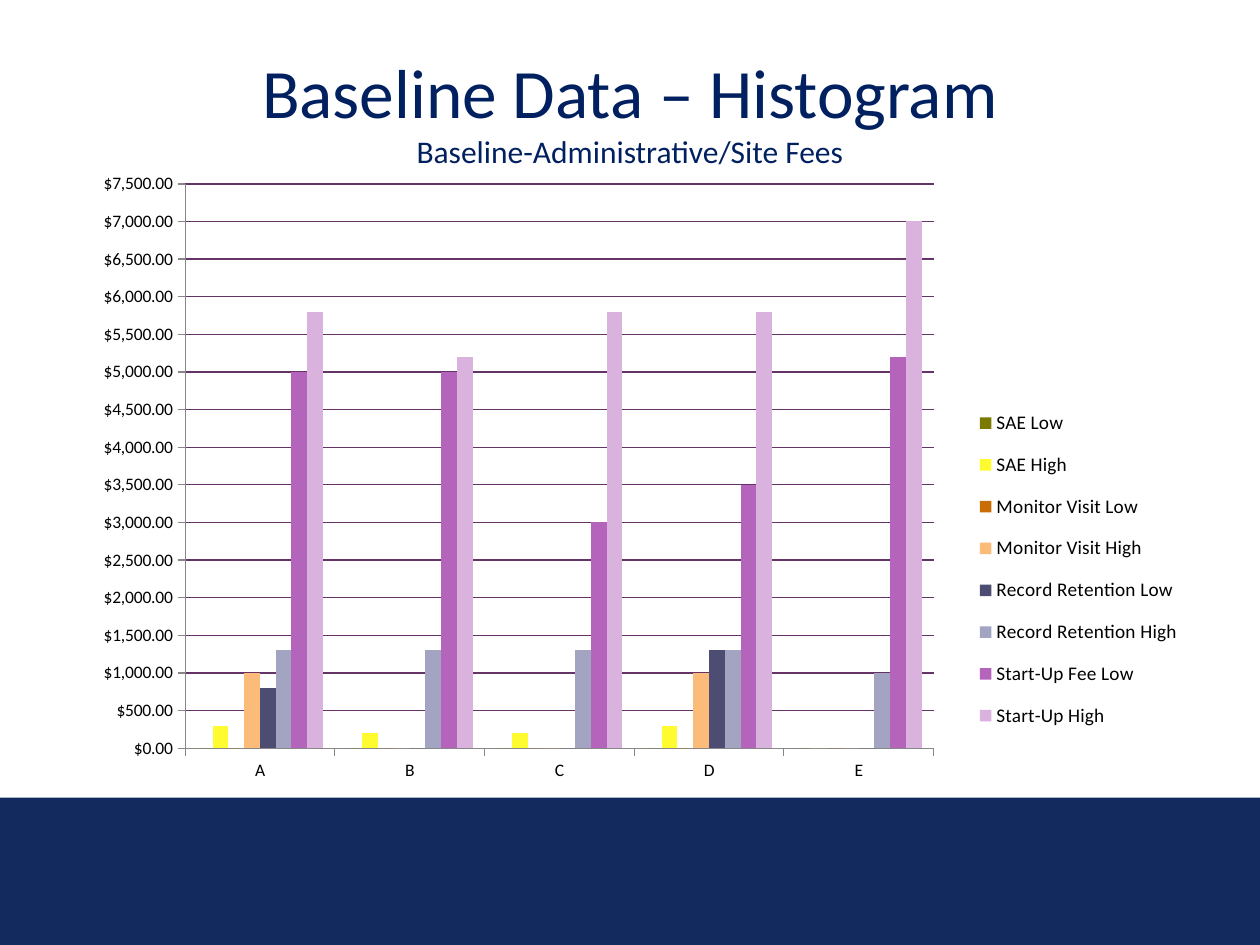
import pptx
import pptx.chart.data
import pptx.dml.color
import pptx.enum.chart
import pptx.enum.shapes
import pptx.enum.text
import pptx.oxml
import pptx.oxml.ns
import pptx.util

RGB = pptx.dml.color.RGBColor
WHITE = RGB(0xFF, 0xFF, 0xFF)
BLACK = RGB(0, 0, 0)
NAVY = RGB(0x12, 0x2A, 0x5D)
TITLE_BLUE = RGB(0x00, 0x20, 0x60)
GRID_PURPLE = RGB(0x66, 0x33, 0x66)
AXIS_GRAY = RGB(0x87, 0x87, 0x87)
OLIVE = RGB(0x7A, 0x79, 0x01)
YELLOW = RGB(0xFE, 0xFB, 0x31)
ORANGE = RGB(0xC9, 0x6D, 0x07)
PEACH = RGB(0xFA, 0xBC, 0x78)
SLATE = RGB(0x4D, 0x4D, 0x73)
LAVENDER = RGB(0xA3, 0xA3, 0xC2)
PURPLE = RGB(0xB4, 0x65, 0xBB)
LILAC = RGB(0xD9, 0xB2, 0xDD)

SITES = ["A", "B", "C", "D", "E"]
FEES = [
    ("SAE Low", OLIVE, [0, 0, 0, 0, 0]),
    ("SAE High", YELLOW, [300, 200, 200, 300, 0]),
    ("Monitor Visit Low", ORANGE, [0, 0, 0, 0, 0]),
    ("Monitor Visit High", PEACH, [1000, 0, 0, 1000, 0]),
    ("Record Retention Low", SLATE, [800, 0, 0, 1300, 0]),
    ("Record Retention High", LAVENDER, [1300, 1300, 1300, 1300, 1000]),
    ("Start-Up Fee Low", PURPLE, [5000, 5000, 3000, 3500, 5200]),
    ("Start-Up High", LILAC, [5800, 5200, 5800, 5800, 7000]),
]


class Deck:
    """Hold the style and the current slide; lengths are in inches on a 10 by 7.5 grid."""

    font = "Calibri"

    def __init__(self):
        self.prs = pptx.Presentation()
        self.prs.slide_width = pptx.util.Inches(10)
        self.prs.slide_height = pptx.util.Inches(7.5)
        self.s = self.prs.slides.add_slide(self.prs.slide_layouts[6])
        self.s.background.fill.solid()
        self.s.background.fill.fore_color.rgb = WHITE

    def box(self, *lengths):
        return [pptx.util.Inches(v) for v in lengths]

    def band(self, at, color):
        sp = self.s.shapes.add_shape(pptx.enum.shapes.MSO_SHAPE.RECTANGLE, *self.box(*at))
        sp.shadow.inherit = False
        sp.fill.solid()
        sp.fill.fore_color.rgb = color
        sp.line.fill.background()

    def title(self, at, lines, color):
        tf = self.s.shapes.add_textbox(*self.box(*at)).text_frame
        tf.word_wrap = True
        tf.vertical_anchor = pptx.enum.text.MSO_ANCHOR.MIDDLE
        p = tf.paragraphs[0]
        p.alignment = pptx.enum.text.PP_ALIGN.CENTER
        p.font.name = self.font
        p.font.color.rgb = color
        for i, (text, size) in enumerate(lines):
            if i:
                p.add_line_break()
            r = p.add_run()
            r.text = text
            r.font.size = pptx.util.Pt(size)

    def layout(self, parent, index, frame, part, inner=False):
        for old in parent.findall(pptx.oxml.ns.qn("c:layout")):
            parent.remove(old)
        target = '<c:layoutTarget val="inner"/>' if inner else ""
        modes = "".join(f'<c:{k}Mode val="edge"/>' for k in "xy")
        sides = "".join(f'<c:{k} val="{length / whole}"/>'
                        for k, length, whole in zip("xywh", part, frame[2:] * 2))
        parent.insert(index, pptx.oxml.parse_xml(
            f'<c:layout {pptx.oxml.ns.nsdecls("c")}><c:manualLayout>'
            f"{target}{modes}{sides}</c:manualLayout></c:layout>"))

    def column_chart(self, at, categories, series, plot, legend):
        data = pptx.chart.data.CategoryChartData()
        data.categories = categories
        for name, _, values in series:
            data.add_series(name, values)
        kind = pptx.enum.chart.XL_CHART_TYPE.COLUMN_CLUSTERED
        chart = self.s.shapes.add_chart(kind, *self.box(*at), data).chart
        chart.has_title = False
        chart.font.name = self.font
        chart.font.size = pptx.util.Pt(10)
        chart.font.color.rgb = BLACK
        bars = chart.plots[0]
        bars.gap_width = 150
        bars.overlap = 0
        bars.vary_by_categories = False
        for ser, (_, color, _) in zip(bars.series, series):
            ser.format.fill.solid()
            ser.format.fill.fore_color.rgb = color
            ser.invert_if_negative = False
        for axis in (chart.category_axis, chart.value_axis):
            axis.major_tick_mark = pptx.enum.chart.XL_TICK_MARK.OUTSIDE
            axis.format.line.color.rgb = AXIS_GRAY
        axis = chart.value_axis
        axis.minimum_scale, axis.maximum_scale, axis.major_unit = 0, 7500, 500
        axis.tick_labels.number_format = '"$"#,##0.00'
        axis.tick_labels.number_format_is_linked = False
        axis.major_gridlines.format.line.color.rgb = GRID_PURPLE
        axis.major_gridlines.format.line.width = pptx.util.Pt(0.75)
        chart.has_legend = True
        chart.legend.position = pptx.enum.chart.XL_LEGEND_POSITION.RIGHT
        chart.legend.include_in_layout = False
        chart.legend.font.size = pptx.util.Pt(11)
        area = chart.element.find(".//" + pptx.oxml.ns.qn("c:plotArea"))
        self.layout(area, 0, at, plot, inner=True)
        self.layout(chart.legend._element, 1, at, legend)


def main():
    deck = Deck()
    deck.band((0, 6.33, 10, 1.17), NAVY)
    deck.title((0.5, 0.3, 9, 1.14),
               [("Baseline Data – Histogram", 39.6), ("Baseline-Administrative/Site Fees", 18)],
               TITLE_BLUE)
    deck.column_chart((0.36, 1.35, 9.27, 4.96), SITES, FEES,
                      plot=(1.11, 0.11, 5.94, 4.48), legend=(7.32, 1.77, 1.76, 2.8))
    deck.prs.save("out.pptx")


if __name__ == "__main__":
    main()
